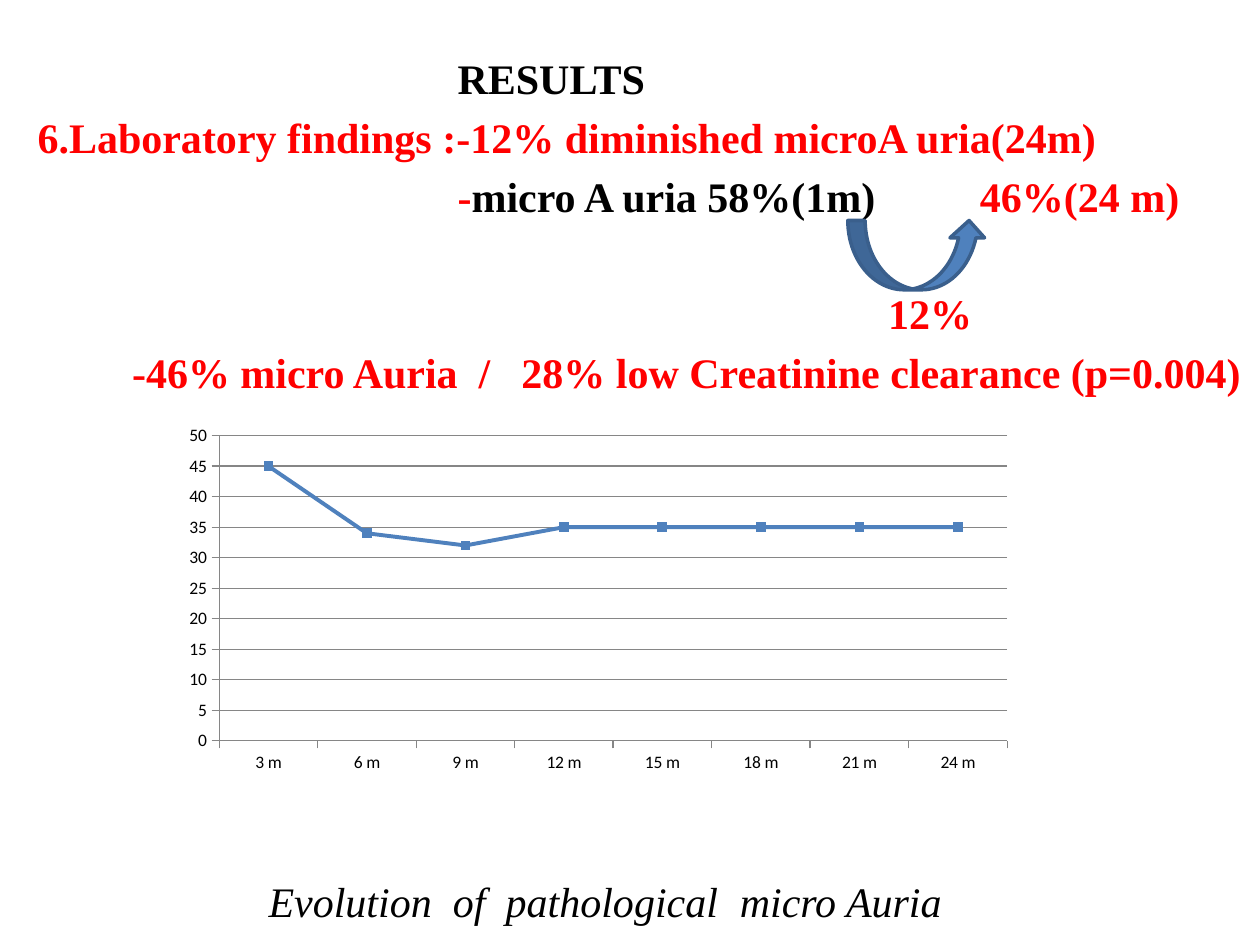
"""Build the laboratory findings slide with its micro Auria line chart."""
from lxml import etree
from pptx import Presentation
from pptx import util as u
from pptx.chart.data import CategoryChartData
from pptx.dml.color import RGBColor
from pptx.enum import chart as charts, shapes
from pptx.oxml.ns import qn

COLORS = {"black": "000000", "red": "FF0000", "blue": "4F81BD", "outline": "3A5F8C", "grey": "868686"}
TEXT_FONT, CHART_FONT = "Times New Roman", "Calibri"
TEXT_SIZE, LINE_HEIGHT, ROW_PITCH = 24, 28.9, 33.6

# Each line: row number, style, tab stops, coloured spans.
LINES = [
    (0, "bold", [240], [("\tRESULTS", "black")]),
    (1, "bold", [], [("6.Laboratory findings :-12% diminished microA uria(24m)", "red")]),
    (2, "bold", [240, 538.5], [("\t-", "red"), ("micro A uria 58%(1m)", "black"), ("\t46%(24 m)", "red")]),
    (4, "bold", [486], [("\t12%", "red")]),
    (5, "bold", [54, 252, 276.5],
     [("\t-46% micro Auria\t/\t28% low Creatinine clearance (p=0.004)", "red")]),
    (14, "italic", [132, 237.3, 267.5, 401.3], [("\tEvolution\tof\tpathological\tmicro Auria", "black")]),
]
MONTHS = [f"{month} m" for month in range(3, 25, 3)]
VALUES = [45, 34, 32, 35, 35, 35, 35, 35]
PLOT = {"x": 0.053, "y": 0.154, "w": 0.924, "h": 0.75}


def color(name):
    return RGBColor.from_string(COLORS[name])


def box(left, top, width, height):
    return [u.Pt(value) for value in (left, top, width, height)]


def add_tabs(paragraph, stops):
    tab_list = etree.SubElement(paragraph._p.get_or_add_pPr(), qn("a:tabLst"))
    for stop in stops:
        etree.SubElement(tab_list, qn("a:tab"), pos=str(u.Pt(stop)), algn="l")


def add_findings(slide):
    frame = slide.shapes.add_textbox(*box(14.4, 26, 705.6, 487.4)).text_frame
    frame.word_wrap = True
    frame.margin_top = u.Pt(4.2)
    previous = None
    for row, style, stops, spans in LINES:
        paragraph = frame.paragraphs[0] if previous is None else frame.add_paragraph()
        if previous is not None:
            paragraph.space_before = u.Pt(round((row - previous) * ROW_PITCH - LINE_HEIGHT, 2))
        previous = row
        if stops:
            add_tabs(paragraph, stops)
        for words, name in spans:
            run = paragraph.add_run()
            run.text = words
            run.font.name, run.font.size = TEXT_FONT, u.Pt(TEXT_SIZE)
            run.font.bold, run.font.italic = style == "bold", style == "italic"
            run.font.color.rgb = color(name)


def add_arrow(slide):
    arrow = slide.shapes.add_shape(shapes.MSO_SHAPE.CURVED_UP_ARROW, *box(484.5, 126, 79.2, 39.6))
    arrow.shadow.inherit = False
    arrow.fill.solid()
    arrow.fill.fore_color.rgb = color("blue")
    arrow.line.color.rgb = color("outline")
    arrow.line.width = u.Pt(2)


def place_plot(chart):
    plot_area = chart._chartSpace.find(".//" + qn("c:plotArea"))
    old_layout = plot_area.find(qn("c:layout"))
    if old_layout is not None:
        plot_area.remove(old_layout)
    layout = etree.Element(qn("c:layout"))
    manual = etree.SubElement(layout, qn("c:manualLayout"))
    settings = {"layoutTarget": "inner", "xMode": "edge", "yMode": "edge", **PLOT}
    for tag, value in settings.items():
        etree.SubElement(manual, qn("c:" + tag), val=str(value))
    plot_area.insert(0, layout)


def add_evolution_chart(slide):
    data = CategoryChartData()
    data.categories = MONTHS
    data.add_series("Series 1", VALUES)
    chart = slide.shapes.add_chart(
        charts.XL_CHART_TYPE.LINE_MARKERS, *box(99.4, 213.1, 487.4, 232.6), data).chart
    chart.has_legend = chart.has_title = False
    chart.font.name, chart.font.size = CHART_FONT, u.Pt(10)
    chart.font.color.rgb = color("black")
    chart.plots[0].vary_by_categories = False
    place_plot(chart)

    value_axis, category_axis = chart.value_axis, chart.category_axis
    value_axis.minimum_scale, value_axis.maximum_scale, value_axis.major_unit = 0, 50, 5
    value_axis.has_major_gridlines = True
    category_axis.has_major_gridlines = False
    for axis in (value_axis, category_axis):
        axis.major_tick_mark = charts.XL_TICK_MARK.OUTSIDE
        axis.minor_tick_mark = charts.XL_TICK_MARK.NONE
    for line in (value_axis.format.line, category_axis.format.line, value_axis.major_gridlines.format.line):
        line.color.rgb = color("grey")
        line.width = u.Pt(0.75)

    series = chart.plots[0].series[0]
    series.smooth = False
    series.format.line.color.rgb = color("blue")
    series.format.line.width = u.Pt(2.25)
    series.marker.style, series.marker.size = charts.XL_MARKER_STYLE.SQUARE, 5
    series.marker.format.fill.solid()
    series.marker.format.fill.fore_color.rgb = color("blue")
    series.marker.format.line.color.rgb = color("blue")


def main():
    presentation = Presentation()
    presentation.slide_width, presentation.slide_height = u.Pt(720), u.Pt(540)
    slide = presentation.slides.add_slide(presentation.slide_layouts[6])
    add_findings(slide)
    add_arrow(slide)
    add_evolution_chart(slide)
    presentation.save("out.pptx")


if __name__ == "__main__":
    main()
